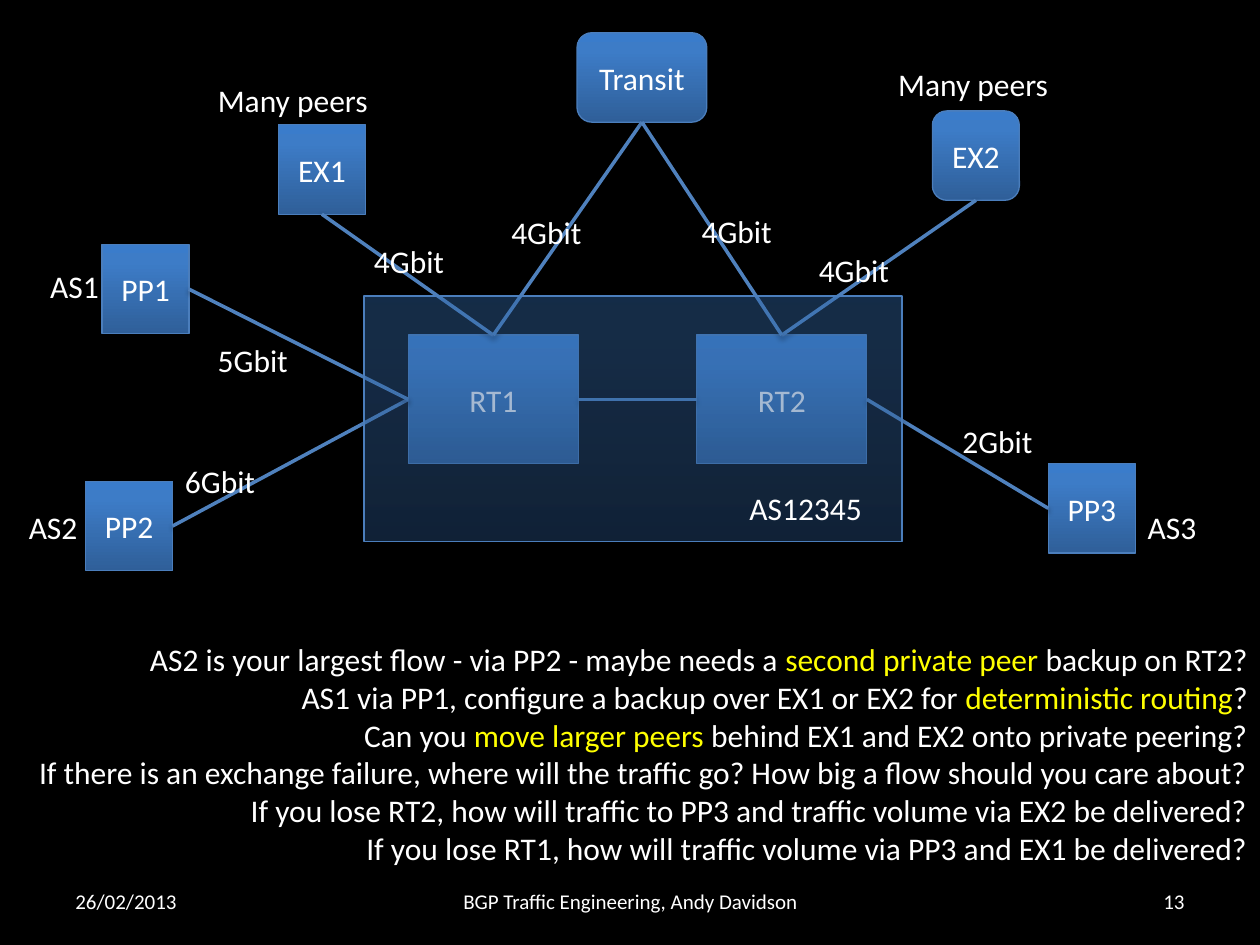
from dataclasses import dataclass

from lxml.etree import SubElement
from pptx import Presentation
from pptx.dml.color import RGBColor
from pptx.enum.shapes import MSO_CONNECTOR, MSO_SHAPE
from pptx.enum.text import MSO_ANCHOR, MSO_AUTO_SIZE, PP_ALIGN
from pptx.oxml.ns import qn
from pptx.util import Inches, Pt


@dataclass(frozen=True)
class Theme:
    back: str = "000000"
    text: str = "FFFFFF"
    mark: str = "FFFF00"
    edge: str = "4B7EBC"
    link: str = "4F81BD"
    grad: tuple = ((0, "2F5F99"), (80, "3D7CC7"), (100, "3A7CCB"))
    font: str = "Calibri"
    body: int = 18
    foot: int = 12


THEME = Theme()
LEFT, MID, RIGHT = PP_ALIGN.LEFT, PP_ALIGN.CENTER, PP_ALIGN.RIGHT
TOP, WEST, BASE, EAST = range(4)  # connection sites of a box

SMALL = (0.69, 0.71)
ROUTER = (1.35, 1.02)
RECT, ROUND = MSO_SHAPE.RECTANGLE, MSO_SHAPE.ROUNDED_RECTANGLE

NODES = [
    ("RT1", 3.24, 2.66, ROUTER, RECT),
    ("RT2", 5.53, 2.66, ROUTER, RECT),
    ("EX2", 7.4, 0.88, SMALL, ROUND),
    ("EX1", 2.21, 0.99, SMALL, RECT),
    ("PP1", 0.81, 1.94, SMALL, RECT),
    ("PP2", 0.68, 3.82, SMALL, RECT),
    ("PP3", 8.32, 3.68, SMALL, RECT),
    ("Transit", 4.58, 0.26, (1.03, 0.71), ROUND),
]

LINKS = [
    ("RT1", WEST, "PP2", EAST),
    ("RT1", WEST, "PP1", EAST),
    ("RT1", TOP, "EX1", BASE),
    ("RT1", EAST, "RT2", WEST),
    ("RT2", TOP, "EX2", BASE),
    ("RT2", EAST, "PP3", WEST),
    ("RT1", TOP, "Transit", BASE),
    ("RT2", TOP, "Transit", BASE),
]

RATES = [
    ("6Gbit", 1.37, 3.62, 0.76),
    ("5Gbit", 1.63, 2.66, 0.76),
    ("2Gbit", 7.54, 3.3, 0.76),
    ("4Gbit", 2.87, 1.87, 0.76),
    ("4Gbit", 6.4, 1.94, 0.76),
    ("4Gbit", 3.96, 1.64, 0.76),
    ("4Gbit", 5.47, 1.63, 0.76),
]

NAMES = [
    ("AS12345", 5.85, 3.83, 1.1),
    ("AS2", 0.13, 3.98, 0.59),
    ("AS1", 0.3, 2.07, 0.59),
    ("Many peers", 1.63, 0.59, 1.41),
    ("Many peers", 7.03, 0.47, 1.41),
    ("AS3", 9.01, 3.98, 0.59),
]

# Every second run of a line is marked.
NOTES = [
    ["AS2 is your largest flow - via PP2 - maybe needs a ",
     "second private peer ", "backup on RT2?"],
    ["AS1 via PP1, configure a backup over EX1 or EX2 for ",
     "deterministic routing", "?"],
    ["Can you ", "move larger peers ",
     "behind EX1 and EX2 onto private peering?"],
    ["If there is an exchange failure, where will the traffic go? "
     "How big a flow should you care about?"],
    ["If you lose RT2, how will traffic to PP3 and traffic volume "
     "via EX2 be delivered?"],
    ["If you lose RT1, how will traffic volume via PP3 and EX1 "
     "be delivered?"],
]

FOOTER = [
    ("26/02/2013", 0.5, 2.33, LEFT),
    ("BGP Traffic Engineering, Andy Davidson", 3.42, 3.17, MID),
    ("13", 7.17, 2.33, RIGHT),
]


def add_color(parent, color, alpha):
    node = SubElement(parent, qn("a:srgbClr"), val=color)
    if alpha < 100:
        SubElement(node, qn("a:alpha"), val=str(alpha * 1000))


def add_shadow(props, dist, alpha):
    """Give the shape properties a soft shadow that falls straight down."""
    effect = props.find(qn("a:effectLst"))
    if effect is None:
        effect = SubElement(props, qn("a:effectLst"))
    shade = SubElement(effect, qn("a:outerShdw"), blurRad=str(Pt(3.1)),
                       dist=str(Pt(dist)), dir="5400000", rotWithShape="0")
    add_color(shade, "000000", alpha)


def write(frame, lines, align, size=THEME.body):
    """Fill the frame with lines, each a list of runs."""
    for i, runs in enumerate(lines):
        para = frame.paragraphs[0] if i == 0 else frame.add_paragraph()
        para.alignment = align
        for j, text in enumerate(runs):
            run = para.add_run()
            run.text = text
            run.font.name = THEME.font
            run.font.size = Pt(size)
            color = THEME.mark if j % 2 else THEME.text
            run.font.color.rgb = RGBColor.from_string(color)


def add_box(slide, x, y, size, kind=RECT, alpha=100):
    box = slide.shapes.add_shape(kind, Inches(x), Inches(y),
                                 *map(Inches, size))
    box.fill.gradient()
    box.fill.gradient_angle = 90
    stops = box._element.spPr.find(qn("a:gradFill")).find(qn("a:gsLst"))
    stops.clear()
    for pos, color in THEME.grad:
        stop = SubElement(stops, qn("a:gs"), pos=str(pos * 1000))
        add_color(stop, color, alpha)
    box.line.color.rgb = RGBColor.from_string(THEME.edge)
    box.line.width = Pt(0.75)
    box.shadow.inherit = False
    add_shadow(box._element.spPr, 1.8, 35)
    return box


def add_node(slide, name, x, y, size, kind):
    box = add_box(slide, x, y, size, kind)
    box.text_frame.vertical_anchor = MSO_ANCHOR.MIDDLE
    write(box.text_frame, [[name]], MID)
    return box


def add_link(slide, start, exit, end, entry):
    link = slide.shapes.add_connector(MSO_CONNECTOR.STRAIGHT, 0, 0, 0, 0)
    link.begin_connect(start, exit)
    link.end_connect(end, entry)
    link.line.color.rgb = RGBColor.from_string(THEME.link)
    link.line.width = Pt(2)
    add_shadow(link._element.spPr, 1.6, 38)


def add_label(slide, lines, x, y, width, height=0.4, align=LEFT):
    """Add text that does not wrap, in a frame that grows with it."""
    label = slide.shapes.add_textbox(*map(Inches, (x, y, width, height)))
    label.text_frame.word_wrap = False
    label.text_frame.auto_size = MSO_AUTO_SIZE.SHAPE_TO_FIT_TEXT
    write(label.text_frame, lines, align)


def add_foot(slide, text, x, width, align):
    foot = slide.shapes.add_textbox(*map(Inches, (x, 6.95, width, 0.4)))
    foot.text_frame.word_wrap = True
    foot.text_frame.vertical_anchor = MSO_ANCHOR.MIDDLE
    write(foot.text_frame, [[text]], align, THEME.foot)


def main():
    deck = Presentation()
    deck.slide_width, deck.slide_height = Inches(10), Inches(7.5)
    slide = deck.slides.add_slide(deck.slide_layouts[6])
    slide.background.fill.solid()
    slide.background.fill.fore_color.rgb = RGBColor.from_string(THEME.back)

    for foot in FOOTER:
        add_foot(slide, *foot)
    nodes = {node[0]: add_node(slide, *node) for node in NODES}
    for start, exit, end, entry in LINKS:
        add_link(slide, nodes[start], exit, nodes[end], entry)
    for text, *place in RATES:
        add_label(slide, [[text]], *place)
    add_label(slide, NOTES, -0.95, 5.03, 10.95, 1.92, RIGHT)
    add_box(slide, 2.89, 2.35, (4.27, 1.95), alpha=35)
    for text, *place in NAMES:
        add_label(slide, [[text]], *place)
    deck.save("out.pptx")


if __name__ == "__main__":
    main()
